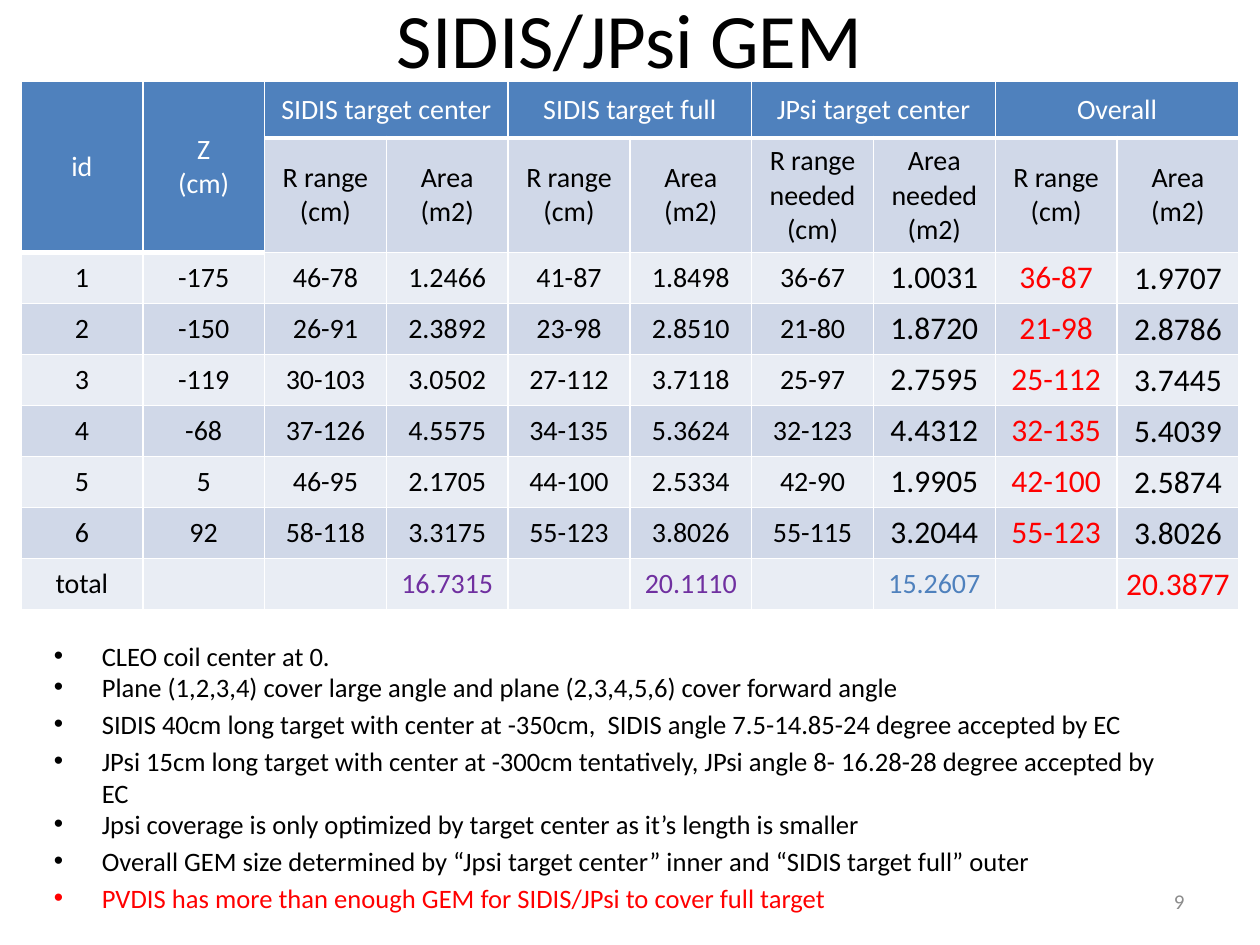
import pptx
import pptx.util
import pptx.dml.color
import pptx.enum.text
import lxml.etree

WIDE = pptx.util.Inches(10)
HIGH = pptx.util.Inches(7.5)
FONT = "Calibri"
COLORS = {
    "black": "000000", "white": "FFFFFF", "red": "FF0000",
    "blue": "4F81BD", "purple": "7030A0", "gray": "8C8C8C",
    "dark": "D0D8E8", "light": "E9EDF4",
}
ALIGN = pptx.enum.text.PP_ALIGN
MIDDLE = pptx.enum.text.MSO_ANCHOR.MIDDLE
TOP = pptx.enum.text.MSO_ANCHOR.TOP

GROUPS = ["SIDIS target center", "SIDIS target full", "JPsi target center", "Overall"]
PAIR = ["R range\n(cm)", "Area\n(m2)"]
NEED = ["R range\nneeded\n(cm)", "Area needed\n(m2)"]
HEADS = [
    ["id", "Z\n(cm)"] + [text for group in GROUPS for text in (group, "")],
    ["", ""] + PAIR + PAIR + NEED + PAIR,
]
PLANES = [
    "1 -175 46-78 1.2466 41-87 1.8498 36-67 1.0031 36-87 1.9707",
    "2 -150 26-91 2.3892 23-98 2.8510 21-80 1.8720 21-98 2.8786",
    "3 -119 30-103 3.0502 27-112 3.7118 25-97 2.7595 25-112 3.7445",
    "4 -68 37-126 4.5575 34-135 5.3624 32-123 4.4312 32-135 5.4039",
    "5 5 46-95 2.1705 44-100 2.5334 42-90 1.9905 42-100 2.5874",
    "6 92 58-118 3.3175 55-123 3.8026 55-115 3.2044 55-123 3.8026",
]
TOTAL = ["total", "", "", "16.7315", "", "20.1110", "", "15.2607", "", "20.3877"]
TINTS = {3: "purple", 5: "purple", 7: "blue", 9: "red"}
NOTES = [
    ("CLEO coil center at 0.", 0.8, "black"),
    ("Plane (1,2,3,4) cover large angle and plane (2,3,4,5,6) cover forward angle", 0.8, "black"),
    ("SIDIS 40cm long target with center at -350cm,  SIDIS angle 7.5-14.85-24 degree accepted by EC", 1.0, "black"),
    ("JPsi 15cm long target with center at -300cm tentatively, JPsi angle 8- 16.28-28 degree accepted by EC", 1.0, "black"),
    ("Jpsi coverage is only optimized by target center as it’s length is smaller", 0.8, "black"),
    ("Overall GEM size determined by “Jpsi target center” inner and “SIDIS target full” outer", 1.0, "black"),
    ("PVDIS has more than enough GEM for SIDIS/JPsi to cover full target", 1.0, "red"),
]


def shade(name):
    return pptx.dml.color.RGBColor.from_string(COLORS[name])


def add_sub(parent, tag, **attrs):
    return lxml.etree.SubElement(parent, pptx.oxml.ns.qn(tag), **attrs)


def style(para, size, color, align):
    para.alignment = align
    para.font.name = FONT
    para.font.size = pptx.util.Pt(size)
    para.font.color.rgb = shade(color)


def add_text(slide, area, text, size, color, align, anchor=MIDDLE):
    left, top, width, height = area
    box = slide.shapes.add_textbox(
        int(WIDE * left), int(HIGH * top), int(WIDE * width), int(HIGH * height))
    frame = box.text_frame
    frame.word_wrap = True
    frame.vertical_anchor = anchor
    frame.text = text
    for para in frame.paragraphs:
        style(para, size, color, align)
    return frame


def add_notes(slide, area):
    text = "\n".join(note[0] for note in NOTES)
    frame = add_text(slide, area, text, 15.2, "black", ALIGN.LEFT, TOP)
    dent = pptx.util.Inches(0.38)
    for para, (_, space, color) in zip(frame.paragraphs, NOTES):
        para.font.color.rgb = shade(color)
        para.line_spacing = space
        para.space_before = pptx.util.Pt(3)
        props = para._p.get_or_add_pPr()
        props.set("marL", str(dent))
        props.set("indent", str(-dent))
        add_sub(props, "a:buFont", typeface="Arial")
        add_sub(props, "a:buChar", char="•")


def add_edges(cell, base):
    props = cell._tc.get_or_add_tcPr()
    for side in "LRTB":
        width = pptx.util.Pt(base if side == "B" else 1)
        line = add_sub(props, f"a:ln{side}", w=str(width))
        fill = add_sub(line, "a:solidFill")
        add_sub(fill, "a:srgbClr", val=COLORS["white"])


def look(row, col):
    if row == 0 or (row == 1 and col < 2):
        return "blue", "white", 16
    fill = "light" if row % 2 == 0 else "dark"
    if row == 1:
        return fill, "black", 16
    if row == 8:
        return fill, TINTS.get(col, "black"), 18 if col == 9 else 16
    return fill, "red" if col == 8 else "black", 18 if col > 6 else 16


def fill_cell(cell, row, col, text):
    fill, color, size = look(row, col)
    add_edges(cell, 3 if row == 0 else 1)
    cell.fill.solid()
    cell.fill.fore_color.rgb = shade(fill)
    cell.vertical_anchor = MIDDLE
    if row > 1 and col == 9:
        cell.margin_left = cell.margin_right = cell.margin_top = pptx.util.Inches(0.01)
        cell.margin_bottom = 0
    cell.text = text
    for para in cell.text_frame.paragraphs:
        style(para, size, color, ALIGN.CENTER)


def add_grid(slide):
    data = HEADS + [plane.split() for plane in PLANES] + [TOTAL]
    rows, cols = len(data), len(TOTAL)
    tall = [0.45, 0.91] + [0.405] * (rows - 2)
    edge = WIDE // 60
    frame = slide.shapes.add_table(
        rows, cols, edge, int(HIGH * 0.086), WIDE - 2 * edge, pptx.util.Inches(sum(tall)))
    table = frame.table
    table.first_row = table.horz_banding = False
    for row, texts in enumerate(data):
        table.rows[row].height = pptx.util.Inches(tall[row])
        for col, text in enumerate(texts):
            fill_cell(table.cell(row, col), row, col, text)
    for col in range(2):
        table.cell(0, col).merge(table.cell(1, col))
    for col in range(2, cols, 2):
        table.cell(0, col).merge(table.cell(0, col + 1))


def main():
    deck = pptx.Presentation()
    deck.slide_width, deck.slide_height = WIDE, HIGH
    slide = deck.slides.add_slide(deck.slide_layouts[6])
    add_text(slide, (0.05, -0.044, 0.9, 0.167), "SIDIS/JPsi GEM", 44, "black", ALIGN.CENTER)
    add_grid(slide)
    add_notes(slide, (0.033, 0.677, 0.9, 0.311))
    add_text(slide, (0.717, 0.927, 0.233, 0.053), "9", 12, "gray", ALIGN.RIGHT)
    deck.save("out.pptx")


if __name__ == "__main__":
    main()
